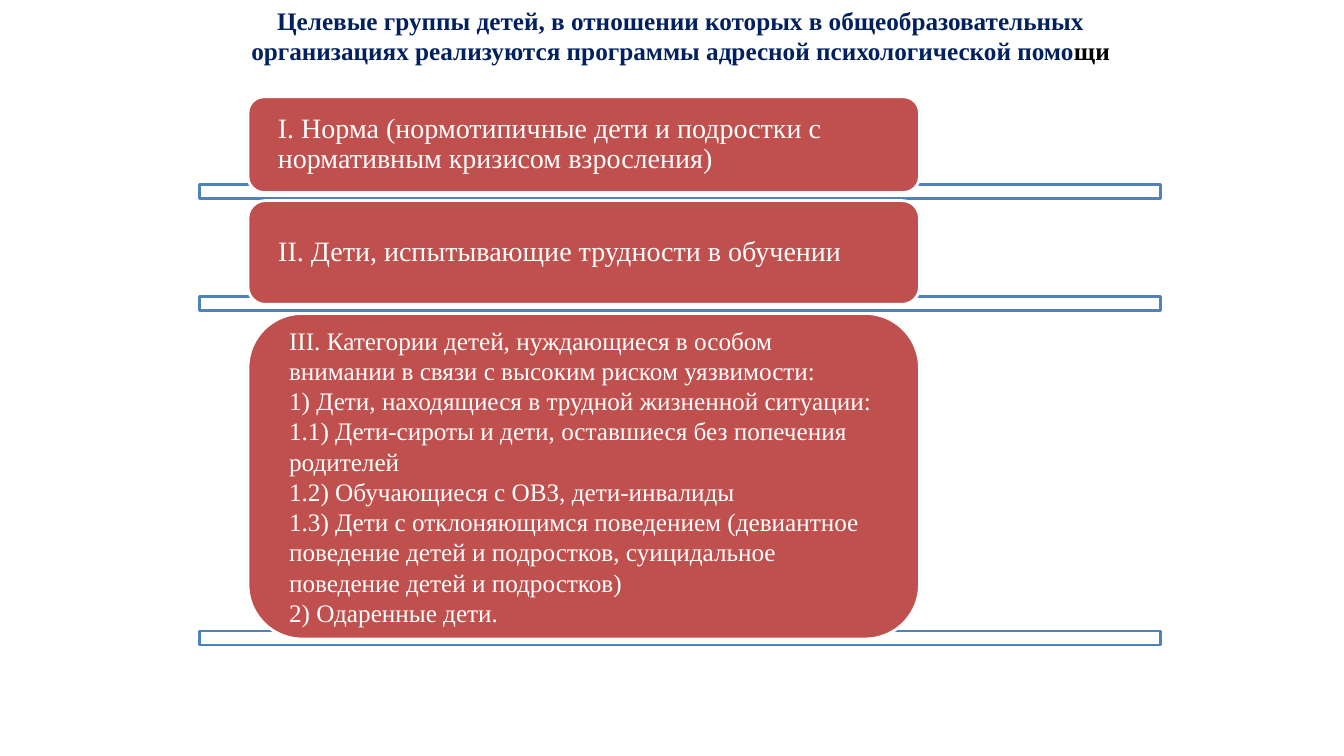
import pptx
import pptx.util
import pptx.dml.color
import pptx.enum.shapes
import pptx.enum.text

Inches = pptx.util.Inches
Pt = pptx.util.Pt
MSO_SHAPE = pptx.enum.shapes.MSO_SHAPE
PP_ALIGN = pptx.enum.text.PP_ALIGN
MSO_ANCHOR = pptx.enum.text.MSO_ANCHOR

COLORS = {"navy": "002060", "black": "000000", "white": "FFFFFF",
          "red": "C0504D", "blue": "4F81BD"}

TITLE = [("Целевые группы детей, в отношении которых в общеобразовательных "
          "организациях реализуются программы адресной психологической помо", "navy"),
         ("щи", "black")]

GROUPS = [
    (0.96, 0.95, 20, 0.9,
     ["I. Норма (нормотипичные дети и подростки с нормативным кризисом взросления)"]),
    (1.99, 1.03, 20, 0.9,
     ["II. Дети, испытывающие трудности в обучении"]),
    (3.11, 3.23, 18, 1.0,
     ["III. Категории детей, нуждающиеся в особом внимании в связи с высоким риском уязвимости:",
      "1) Дети, находящиеся в трудной жизненной ситуации:",
      "1.1) Дети-сироты и дети, оставшиеся без попечения родителей",
      "1.2) Обучающиеся с ОВЗ, дети-инвалиды",
      "1.3) Дети с отклоняющимся поведением (девиантное поведение детей и подростков, "
      "суицидальное поведение детей и подростков)",
      "2) Одаренные дети."]),
]
BAR_HEIGHT = 0.14
BAR_OVERLAP = 0.08


class SlideBuilder:
    font = "Times New Roman"

    def __init__(self, slide):
        self.slide = slide

    def color(self, name):
        return pptx.dml.color.RGBColor.from_string(COLORS[name])

    def apply(self, obj, values):
        for name, value in values.items():
            setattr(obj, name, value)

    def run(self, p, text, size, color, bold=False):
        r = p.add_run()
        r.text = text
        self.apply(r.font, {"name": self.font, "size": Pt(size), "bold": bold})
        r.font.color.rgb = self.color(color)

    def title(self, box, runs):
        sp = self.slide.shapes.add_textbox(*map(Inches, box))
        tf = sp.text_frame
        tf.word_wrap = True
        p = tf.paragraphs[0]
        p.alignment = PP_ALIGN.CENTER
        for text, color in runs:
            self.run(p, text, 18, color, bold=True)

    def shape(self, kind, box, fill, line):
        sp = self.slide.shapes.add_shape(kind, *map(Inches, box))
        sp.shadow.inherit = False
        sp.fill.solid()
        sp.fill.fore_color.rgb = self.color(fill)
        sp.line.color.rgb = self.color(line)
        sp.line.width = Pt(2)
        return sp

    def bar(self, top):
        self.shape(MSO_SHAPE.RECTANGLE, (1.98, top, 9.53, BAR_HEIGHT), "white", "blue")

    def card(self, top, height, size, spacing, lines):
        sp = self.shape(MSO_SHAPE.ROUNDED_RECTANGLE, (2.46, top, 6.66, height), "red", "white")
        tf = sp.text_frame
        self.apply(tf, {"word_wrap": True, "vertical_anchor": MSO_ANCHOR.MIDDLE,
                        "margin_left": Inches(0.25), "margin_right": Inches(0.25),
                        "margin_top": 0, "margin_bottom": 0})
        for i, line in enumerate(lines):
            p = tf.add_paragraph() if i else tf.paragraphs[0]
            self.apply(p, {"alignment": PP_ALIGN.LEFT, "line_spacing": spacing})
            self.run(p, line, size, "white")


def main():
    prs = pptx.Presentation()
    prs.slide_width = Inches(13.33)
    prs.slide_height = Inches(7.5)
    s = SlideBuilder(prs.slides.add_slide(prs.slide_layouts[6]))
    s.title((2.26, 0, 8.98, 0.71), TITLE)
    for top, height, size, spacing, lines in GROUPS:
        s.bar(top + height - BAR_OVERLAP)
        s.card(top, height, size, spacing, lines)
    prs.save("out.pptx")


if __name__ == "__main__":
    main()
